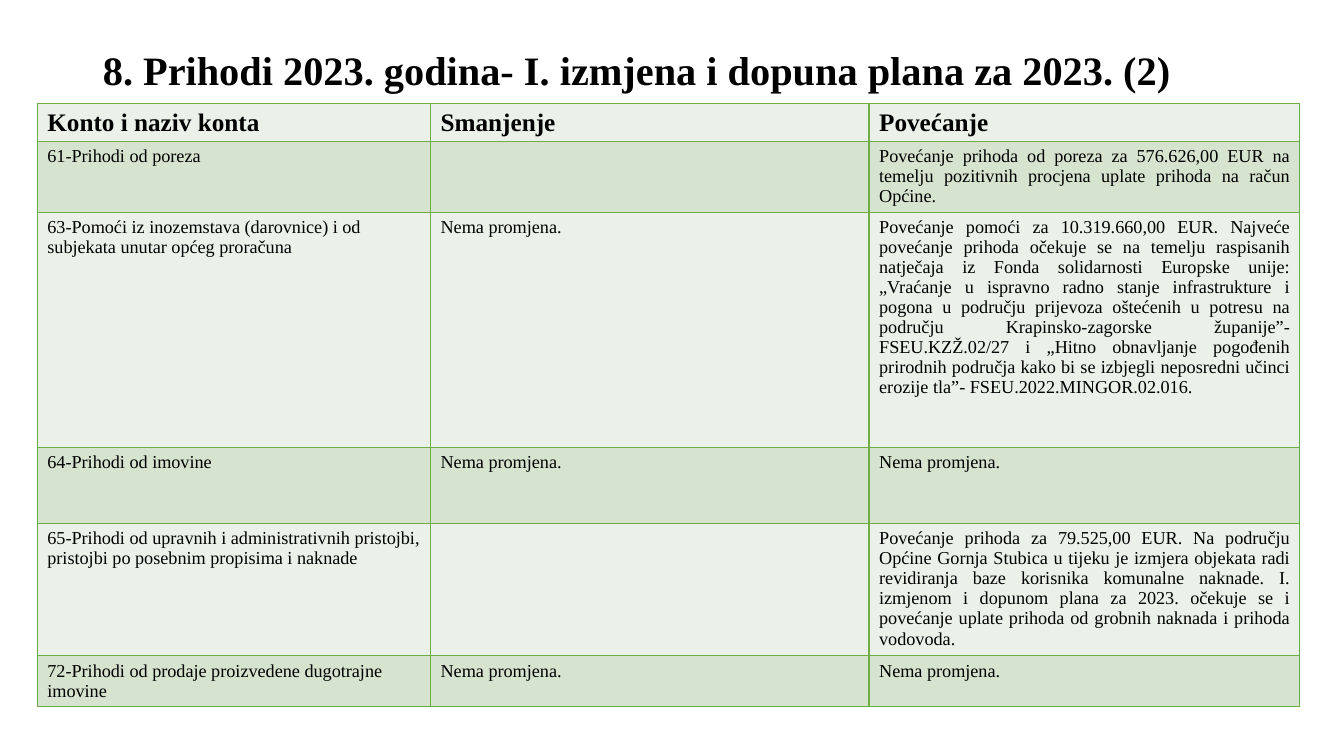
from lxml.etree import SubElement
from pptx import Presentation
from pptx.dml.color import RGBColor
from pptx.enum.text import MSO_ANCHOR, MSO_AUTO_SIZE, PP_ALIGN
from pptx.oxml.ns import qn
from pptx.util import Inches, Pt

FONT = "Times New Roman"
INK, EDGE = "000000", "70AD47"
BANDS = ["EBF1E9", "D5E3CF"]
TITLE = "8. Prihodi 2023. godina- I. izmjena i dopuna plana za 2023. (2)"
SAME = "Nema promjena."
WIDTHS = [3.9, 4.35, 4.27]
HEIGHTS = [0.37, 0.7, 2.33, 0.76, 1.31, 0.5]
ROWS = [
    ("Konto i naziv konta", "Smanjenje", "Povećanje"),
    ("61-Prihodi od poreza", "",
     "Povećanje prihoda od poreza za 576.626,00 EUR na temelju pozitivnih "
     "procjena uplate prihoda na račun Općine."),
    ("63-Pomoći iz inozemstava (darovnice) i od subjekata unutar općeg proračuna",
     SAME,
     "Povećanje pomoći za 10.319.660,00 EUR. Najveće povećanje prihoda očekuje "
     "se na temelju raspisanih natječaja iz Fonda solidarnosti Europske unije: "
     "„Vraćanje u ispravno radno stanje infrastrukture i pogona u području "
     "prijevoza oštećenih u potresu na području Krapinsko-zagorske županije”- "
     "FSEU.KZŽ.02/27 i „Hitno obnavljanje pogođenih prirodnih područja kako bi "
     "se izbjegli neposredni učinci erozije tla”- FSEU.2022.MINGOR.02.016."),
    ("64-Prihodi od imovine", SAME, SAME),
    ("65-Prihodi od upravnih i administrativnih pristojbi, pristojbi po posebnim "
     "propisima i naknade", "",
     "Povećanje prihoda za 79.525,00 EUR. Na području Općine Gornja Stubica u "
     "tijeku je izmjera objekata radi revidiranja baze korisnika komunalne "
     "naknade. I. izmjenom i dopunom plana za 2023. očekuje se i povećanje "
     "uplate prihoda od grobnih naknada i prihoda vodovoda."),
    ("72-Prihodi od prodaje proizvedene dugotrajne imovine", SAME, SAME),
]


def color(code):
    return RGBColor.from_string(code)


def assign(item, values):
    for key, value in values.items():
        setattr(item, key, value)


def write(frame, text, size, bold, align):
    para = frame.paragraphs[0]
    para.alignment = align
    if text:
        run = para.add_run()
        run.text = text
        assign(run.font, {"name": FONT, "size": Pt(size), "bold": bold})
        run.font.color.rgb = color(INK)
    return para


def border(cell):
    props = cell._tc.get_or_add_tcPr()
    for spot, side in enumerate(["lnL", "lnR", "lnT", "lnB"]):
        line = SubElement(props, qn("a:" + side), w=str(Pt(1)))
        fill = SubElement(line, qn("a:solidFill"))
        SubElement(fill, qn("a:srgbClr"), val=EDGE)
        props.insert(spot, line)


def add_title(slide, left, top, width, height):
    title = slide.shapes.title
    assign(title, {"left": Inches(left), "top": Inches(top),
                   "width": Inches(width), "height": Inches(height)})
    assign(title.text_frame, {"word_wrap": True, "auto_size": MSO_AUTO_SIZE.NONE,
                              "vertical_anchor": MSO_ANCHOR.MIDDLE})
    para = write(title.text_frame, TITLE, 28.8, True, PP_ALIGN.LEFT)
    para.line_spacing = 0.9


def add_plan(slide, left, top):
    table = slide.shapes.add_table(
        len(ROWS), len(WIDTHS), Inches(left), Inches(top),
        Inches(sum(WIDTHS)), Inches(sum(HEIGHTS))).table
    for col, width in zip(table.columns, WIDTHS):
        col.width = Inches(width)
    for row, height in zip(table.rows, HEIGHTS):
        row.height = Inches(height)
    for i, texts in enumerate(ROWS):
        head = i == 0
        for j, text in enumerate(texts):
            cell = table.cell(i, j)
            cell.fill.solid()
            cell.fill.fore_color.rgb = color(BANDS[i % 2])
            border(cell)
            align = PP_ALIGN.LEFT if head or j == 0 else PP_ALIGN.JUSTIFY
            write(cell.text_frame, text, 18 if head else 13, head, align)


def main():
    deck = Presentation()
    assign(deck, {"slide_width": Inches(13.33), "slide_height": Inches(7.5)})
    slide = deck.slides.add_slide(deck.slide_layouts[5])
    add_title(slide, 0.92, 0.41, 11.5, 0.62)
    add_plan(slide, 0.37, 1.03)
    deck.save("out.pptx")


if __name__ == "__main__":
    main()
